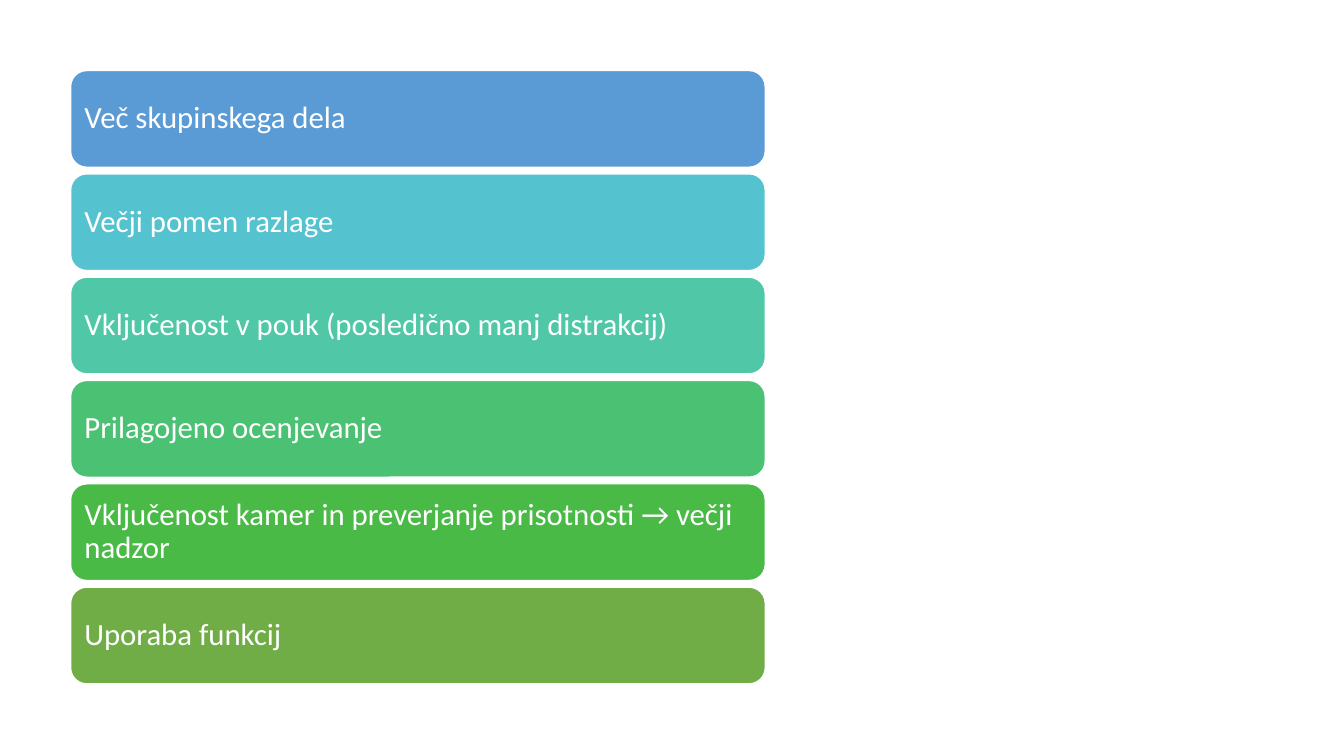
from pptx import Presentation
from pptx.dml.color import RGBColor
from pptx.enum.shapes import MSO_SHAPE
from pptx.enum.text import MSO_ANCHOR, PP_ALIGN
from pptx.util import Inches, Pt

ROUND = MSO_SHAPE.ROUNDED_RECTANGLE
MIDDLE = MSO_ANCHOR.MIDDLE
LEFT = PP_ALIGN.LEFT

WHITE = RGBColor(0xFF, 0xFF, 0xFF)
BLUE = RGBColor(0x5B, 0x9B, 0xD5)
AQUA = RGBColor(0x55, 0xC3, 0xCF)
TEAL = RGBColor(0x50, 0xC8, 0xA7)
MINT = RGBColor(0x4B, 0xC1, 0x74)
GREEN = RGBColor(0x4A, 0xBA, 0x46)
OLIVE = RGBColor(0x70, 0xAD, 0x47)

TOP = 0.7
STEP = 1.025
POINTS = [
    ("Več skupinskega dela", BLUE),
    ("Večji pomen razlage", AQUA),
    ("Vključenost v pouk (posledično manj distrakcij)", TEAL),
    ("Prilagojeno ocenjevanje", MINT),
    ("Vključenost kamer in preverjanje prisotnosti → večji nadzor", GREEN),
    ("Uporaba funkcij", OLIVE),
]


def add_bar(slide, top, text, color):
    """Add one rounded bar with its text."""
    bar = slide.shapes.add_shape(
        ROUND, Inches(0.7), Inches(top), Inches(6.89), Inches(0.96))
    bar.shadow.inherit = False
    bar.fill.solid()
    bar.fill.fore_color.rgb = color
    bar.line.color.rgb = WHITE
    bar.line.width = Pt(1)
    frame = bar.text_frame
    frame.word_wrap = True
    frame.vertical_anchor = MIDDLE
    frame.margin_left = frame.margin_right = Inches(0.09)
    frame.margin_top = frame.margin_bottom = Inches(0.09)
    para = frame.paragraphs[0]
    para.alignment = LEFT
    para.line_spacing = 0.9
    run = para.add_run()
    run.text = text
    run.font.name = "Calibri"
    run.font.size = Pt(22)
    run.font.color.rgb = WHITE


def main():
    """Build the slide and save it."""
    deck = Presentation()
    deck.slide_width = Inches(13.33)
    deck.slide_height = Inches(7.5)
    slide = deck.slides.add_slide(deck.slide_layouts[6])
    for row, (text, color) in enumerate(POINTS):
        add_bar(slide, TOP + row * STEP, text, color)
    deck.save("out.pptx")


if __name__ == "__main__":
    main()
